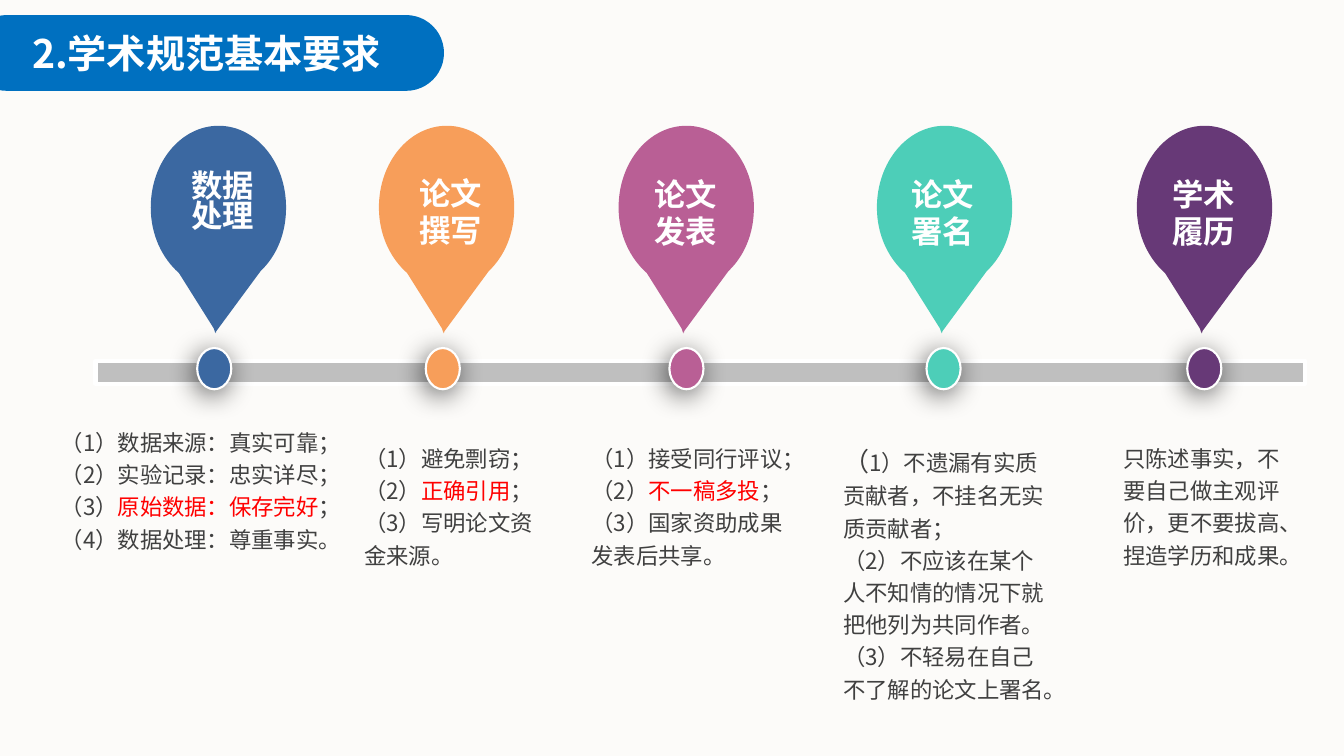
"""Build the slide on the basic requirements of academic norms."""
from dataclasses import dataclass
from itertools import chain
from typing import Any

from lxml.etree import SubElement
from pptx import Presentation
from pptx.dml.color import RGBColor
from pptx.enum.shapes import MSO_SHAPE
from pptx.enum.text import MSO_ANCHOR, PP_ALIGN
from pptx.oxml import parse_xml
from pptx.oxml.ns import nsdecls, qn
from pptx.util import Cm, Pt

FONT = "Noto Sans CJK SC"
BACKGROUND = RGBColor(0xFC, 0xFB, 0xF9)
WHITE = RGBColor(0xFF, 0xFF, 0xFF)
GREY = RGBColor(0xBF, 0xBF, 0xBF)
DARK = RGBColor(0x40, 0x40, 0x40)
RED = RGBColor(0xFF, 0x00, 0x00)
HEADER_BLUE = RGBColor(0x00, 0x70, 0xC0)
BLUE = RGBColor(0x3B, 0x68, 0xA1)
ORANGE = RGBColor(0xF7, 0x9E, 0x5A)
PINK = RGBColor(0xB9, 0x5F, 0x95)
TEAL = RGBColor(0x4D, 0xCE, 0xB8)
PURPLE = RGBColor(0x67, 0x39, 0x77)

PIN_TOP = 3.17
PIN_START = (1.71, 0)
PIN_SEGMENTS = (
    ((2.65, 0), (3.41, 0.91), (3.41, 2.06)),
    ((3.41, 2.72), (3.17, 3.28), (2.77, 3.66)),
    ((1.65, 5.18),),
    ((1.65, 5.21),),
    ((1.63, 5.21),),
    ((1.63, 5.23),),
    ((1.59, 5.11),),
    ((0.71, 3.71),),
    ((0.28, 3.33), (0, 2.74), (0, 2.06)),
    ((0, 0.91), (0.77, 0), PIN_START),
)

Box = tuple[float, float, float, float]


@dataclass(frozen=True)
class Span:
    text: str
    color: RGBColor = DARK
    size: float = 16
    bold: bool = False


@dataclass(frozen=True)
class Milestone:
    label: str
    color: RGBColor
    pin_left: float
    dot_left: float
    label_left: float
    note_box: Box
    note: tuple[tuple[Span, ...], ...]
    label_top: float = 4.23
    label_spacing: float = 1.0


MILESTONES = (
    Milestone("数据处理", BLUE, 3.8, 4.97, 4.17, (1.2, 10.68, 7.65, 3.73), (
        (Span("（1）数据来源：真实可靠；"),),
        (Span("（2）实验记录：忠实详尽；"),),
        (Span("（3）"), Span("原始数据：保存完好", RED), Span("；")),
        (Span("（4）数据处理：尊重事实。"),),
    ), label_top=4.2, label_spacing=0.8),
    Milestone("论文撰写", ORANGE, 9.55, 10.73, 9.91, (8.85, 11.08, 5.21, 3.56), (
        (Span("（1）避免剽窃；"),),
        (Span("（2）"), Span("正确引用", RED), Span("；")),
        (Span("（3）写明论文资金来源。"),),
    ), label_top=4.2),
    Milestone("论文发表", PINK, 15.59, 16.87, 15.83, (14.58, 11.08, 5.69, 3.86), (
        (Span("（1）接受同行评议；"),),
        (Span("（2）"), Span("不一稿多投", RED), Span("；")),
        (Span("（3）国家资助成果发表后共享。"),),
    )),
    Milestone("论文署名", TEAL, 22.1, 23.35, 22.31, (20.92, 11.08, 5.99, 7.06), (
        (Span("（", size=18.6), Span("1）不遗漏有实质贡献者，不挂名无实质贡献者；")),
        (Span("（2）不应该在某个人不知情的情况下就把他列为共同作者。"),),
        (Span("（3）不轻易在自己不了解的论文上署名。"),),
    )),
    Milestone("学术履历", PURPLE, 28.65, 29.92, 28.88, (27.98, 11.08, 4.75, 3.56), (
        (Span("只陈述事实，不要自己做主观评价，更不要拔高、捏造学历和成果。"),),
    )),
)


def apply_format(target: Any, values: dict[str, Any]) -> None:
    for name, value in values.items():
        setattr(target, name, value)


def paint(shape: Any, fill: RGBColor, line_width: float = 0) -> None:
    shape.shadow.inherit = False
    shape.fill.solid()
    shape.fill.fore_color.rgb = fill
    if line_width:
        shape.line.color.rgb = WHITE
        shape.line.width = Pt(line_width)
    else:
        shape.line.fill.background()


def add_preset(slide: Any, kind: MSO_SHAPE, box: Box, fill: RGBColor, line_width: float = 0) -> Any:
    shape = slide.shapes.add_shape(kind, *map(Cm, box))
    paint(shape, fill, line_width)
    return shape


def write_spans(paragraph: Any, spans: tuple[Span, ...]) -> None:
    for span in spans:
        run = paragraph.add_run()
        run.text = span.text
        apply_format(run.font, {"name": FONT, "size": Pt(span.size), "bold": span.bold})
        run.font.color.rgb = span.color
        SubElement(run.font._element, qn("a:ea")).set("typeface", FONT)


def add_text(slide: Any, box: Box, lines: tuple[tuple[Span, ...], ...], spacing: float,
             inset_left: float = 0.33, inset_top: float = 0) -> None:
    frame = slide.shapes.add_textbox(*map(Cm, box)).text_frame
    apply_format(frame, {
        "word_wrap": True,
        "margin_left": Cm(inset_left),
        "margin_top": Cm(inset_top),
        "margin_right": Cm(0.33),
        "margin_bottom": 0,
    })
    for index, spans in enumerate(lines):
        paragraph = frame.add_paragraph() if index else frame.paragraphs[0]
        paragraph.line_spacing = spacing
        write_spans(paragraph, spans)


def curve_segments(shape: Any) -> None:
    lines = iter(list(shape._element.spPr.iter(qn("a:lnTo"))))
    for segment in PIN_SEGMENTS:
        first, *others = [next(lines) for _ in segment]
        if others:
            first.tag = qn("a:cubicBezTo")
        for line in others:
            first.append(line[0])
            line.getparent().remove(line)


def add_pin(slide: Any, left: float, color: RGBColor) -> None:
    outline = (PIN_START, *chain.from_iterable(PIN_SEGMENTS))
    start, *rest = [(Cm(left + x), Cm(PIN_TOP + y)) for x, y in outline]
    builder = slide.shapes.build_freeform(*start)
    builder.add_line_segments(rest, close=True)
    pin = builder.convert_to_shape()
    curve_segments(pin)
    paint(pin, color)


def add_dot(slide: Any, left: float, color: RGBColor) -> None:
    dot = add_preset(slide, MSO_SHAPE.OVAL, (left, 8.77, 0.86, 1.04), color, 1.5)
    effects = dot._element.spPr.find(qn("a:effectLst"))
    effects.append(parse_xml(
        f'<a:outerShdw {nsdecls("a")} blurRad="{Pt(20)}" dist="{Pt(4)}" dir="{120 * 60000}" rotWithShape="0">'
        '<a:srgbClr val="000000"><a:alpha val="58000"/></a:srgbClr></a:outerShdw>'
    ))


def add_header(slide: Any) -> None:
    header = add_preset(slide, MSO_SHAPE.ROUNDED_RECTANGLE, (-0.78, 0.38, 11.97, 1.91), HEADER_BLUE)
    header.adjustments[0] = 0.5
    header.text_frame.vertical_anchor = MSO_ANCHOR.MIDDLE
    paragraph = header.text_frame.paragraphs[0]
    paragraph.alignment = PP_ALIGN.CENTER
    write_spans(paragraph, (Span("2.学术规范基本要求", WHITE, 28, True),))


def main() -> None:
    presentation = Presentation()
    apply_format(presentation, {"slide_width": Cm(33.87), "slide_height": Cm(19.05)})
    slide = presentation.slides.add_slide(presentation.slide_layouts[6])
    slide.background.fill.solid()
    slide.background.fill.fore_color.rgb = BACKGROUND
    add_preset(slide, MSO_SHAPE.RECTANGLE, (2.41, 9.09, 30.48, 0.58), GREY, 3)
    for milestone in MILESTONES:
        add_pin(slide, milestone.pin_left, milestone.color)
        add_dot(slide, milestone.dot_left, milestone.color)
        label_box = (milestone.label_left, milestone.label_top, 2.69, 2.36)
        label = ((Span(milestone.label, WHITE, 22.4, True),),)
        add_text(slide, label_box, label, milestone.label_spacing, 0.66, 0.18)
        add_text(slide, milestone.note_box, milestone.note, 1.2)
    add_header(slide)
    presentation.save("out.pptx")


if __name__ == "__main__":
    main()
